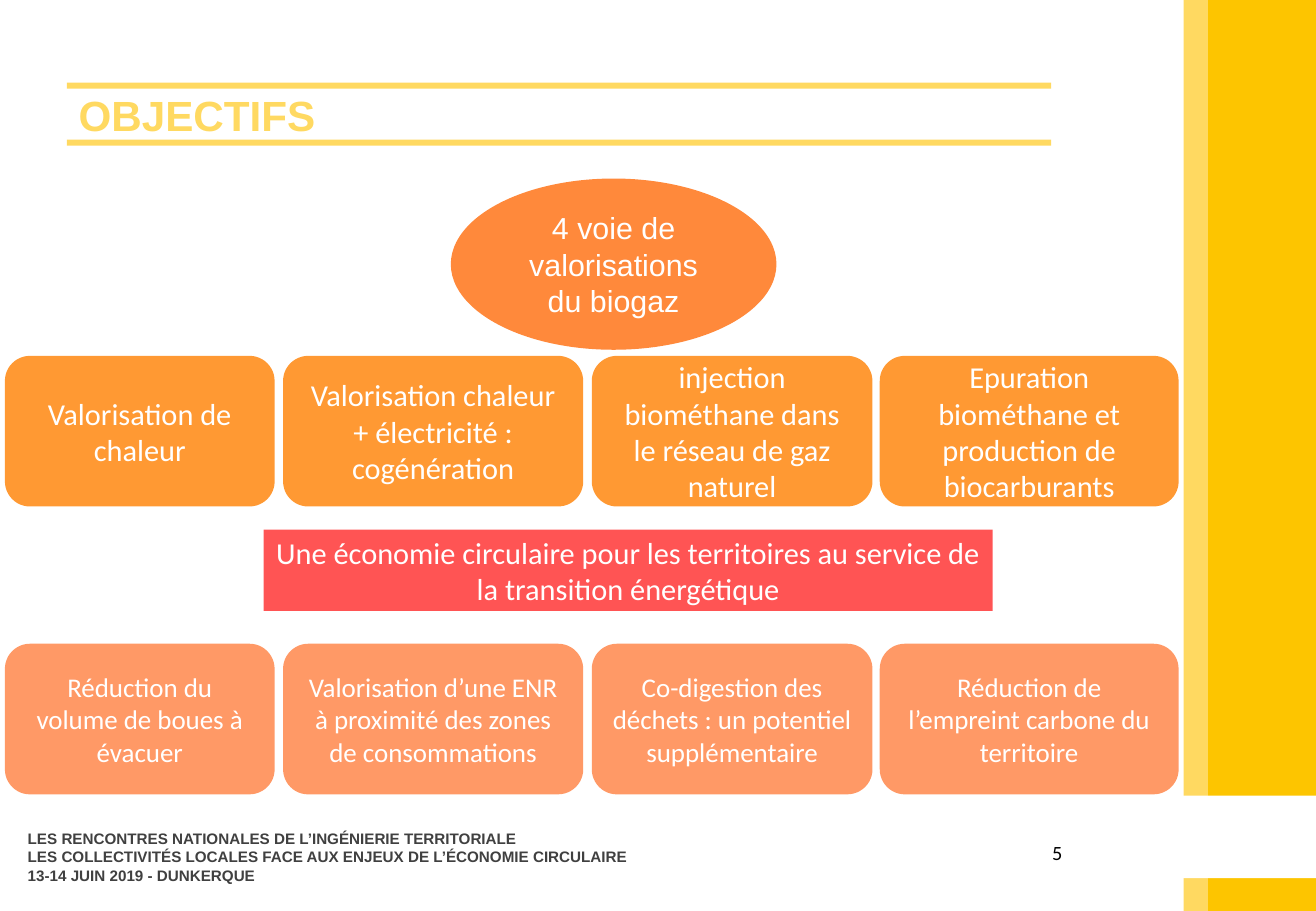
from pptx import Presentation
from pptx.dml.color import RGBColor
from pptx.enum.shapes import MSO_SHAPE as Shape
from pptx.enum.text import MSO_ANCHOR as Anchor, PP_ALIGN as Align
from pptx.oxml.ns import qn
from pptx.util import Inches, Pt
from lxml import etree

COLORS = {
    "gold": "FDC500", "pale_gold": "FFD961", "white": "FFFFFF",
    "black": "000000", "grey": "404040", "deep_orange": "FF6600",
    "orange": "FF9933", "red": "FF0000", "salmon": "FF9966",
}

# Left edge and width of the four columns, shared by both rows of cards
COLUMNS = [(0.04, 2.22), (2.33, 2.47), (4.87, 2.31), (7.24, 2.46)]
CARD_HEIGHT = 1.24
OUTLETS = [
    "Valorisation de chaleur",
    "Valorisation chaleur + électricité : cogénération",
    "injection biométhane dans le réseau de gaz naturel",
    "Epuration biométhane et production de biocarburants",
]
BENEFITS = [
    "Réduction du volume de boues à évacuer",
    "Valorisation d’une ENR à proximité des zones de consommations",
    "Co-digestion des déchets : un potentiel supplémentaire",
    "Réduction de l’empreint carbone du territoire",
]
FOOTER = [
    "LES RENCONTRES NATIONALES DE L’INGÉNIERIE TERRITORIALE",
    "LES COLLECTIVITÉS LOCALES FACE AUX ENJEUX DE L’ÉCONOMIE CIRCULAIRE",
    "13-14 JUIN 2019 - DUNKERQUE",
]


def write(box, lines, size, color="white", font="Calibri", bold=False, align=Align.CENTER):
    frame = box.text_frame
    frame.word_wrap = True
    frame.vertical_anchor = Anchor.MIDDLE
    for index, line in enumerate(lines):
        para = frame.paragraphs[0] if index == 0 else frame.add_paragraph()
        para.text = line
        para.alignment = align
        para.font.name = font
        para.font.size = Pt(size)
        para.font.bold = bold
        para.font.color.rgb = RGBColor.from_string(COLORS[color])


def add_block(page, kind, area, color, opacity=100):
    block = page.shapes.add_shape(kind, *map(Inches, area))
    block.shadow.inherit = False
    block.line.fill.background()
    block.fill.solid()
    block.fill.fore_color.rgb = RGBColor.from_string(COLORS[color])
    if opacity < 100:
        tint = block.fill._xPr.find(qn("a:solidFill"))[0]
        etree.SubElement(tint, qn("a:alpha")).set("val", str(opacity * 1000))
    return block


def add_text(page, area, lines, size, color, **style):
    write(page.shapes.add_textbox(*map(Inches, area)), lines, size, color, **style)


def add_side_band(page, left, height):
    add_block(page, Shape.RECTANGLE, (left + 0.2, 0, 0.9, height), "gold")
    add_block(page, Shape.RECTANGLE, (left, 0, 0.2, height), "pale_gold")
    # White gap across the band
    add_block(page, Shape.RECTANGLE, (left - 0.22, 6.55, 1.31, 0.68), "white")


def add_title(page, left, top, width, height, title):
    rule = 0.05
    for rule_top in (top, top + height - rule):
        add_block(page, Shape.RECTANGLE, (left, rule_top, width, rule), "pale_gold")
    add_text(page, (left, top, width, height), [title], 25, "pale_gold",
             font="Arial", bold=True, align=Align.LEFT)


def add_card_row(page, top, labels, color, size):
    for (left, width), label in zip(COLUMNS, labels):
        card = add_block(page, Shape.ROUNDED_RECTANGLE, (left, top, width, CARD_HEIGHT), color)
        write(card, [label], size)


def add_footer(page, left, top):
    add_text(page, (left + 8.27, top + 0.08, 0.6, 0.4), ["5"], 12, "black")
    add_text(page, (left, top, 7.41, 0.63), FOOTER, 9, "grey",
             font="Arial", bold=True, align=Align.LEFT)


def add_objectives(page):
    # Starting point
    source = add_block(page, Shape.OVAL, (3.71, 1.47, 2.68, 1.41), "deep_orange", 77)
    write(source, ["4 voie de valorisations du biogaz"], 18, font="Arial")
    # Outlets, shared message, benefits
    add_card_row(page, 2.93, OUTLETS, "orange", 18)
    message = add_block(page, Shape.RECTANGLE, (2.17, 4.36, 6, 0.67), "red", 67)
    write(message, ["Une économie circulaire pour les territoires au service de "
                    "la transition énergétique"], 18)
    add_card_row(page, 5.3, BENEFITS, "salmon", 16)


def main():
    deck = Presentation()
    deck.slide_width, deck.slide_height = Inches(10.83), Inches(7.5)
    page = deck.slides.add_slide(deck.slide_layouts[6])
    add_side_band(page, 9.74, 7.5)
    add_title(page, 0.55, 0.68, 8.1, 0.52, "OBJECTIFS")
    add_footer(page, 0.13, 6.74)
    add_objectives(page)
    deck.save("out.pptx")


if __name__ == "__main__":
    main()
